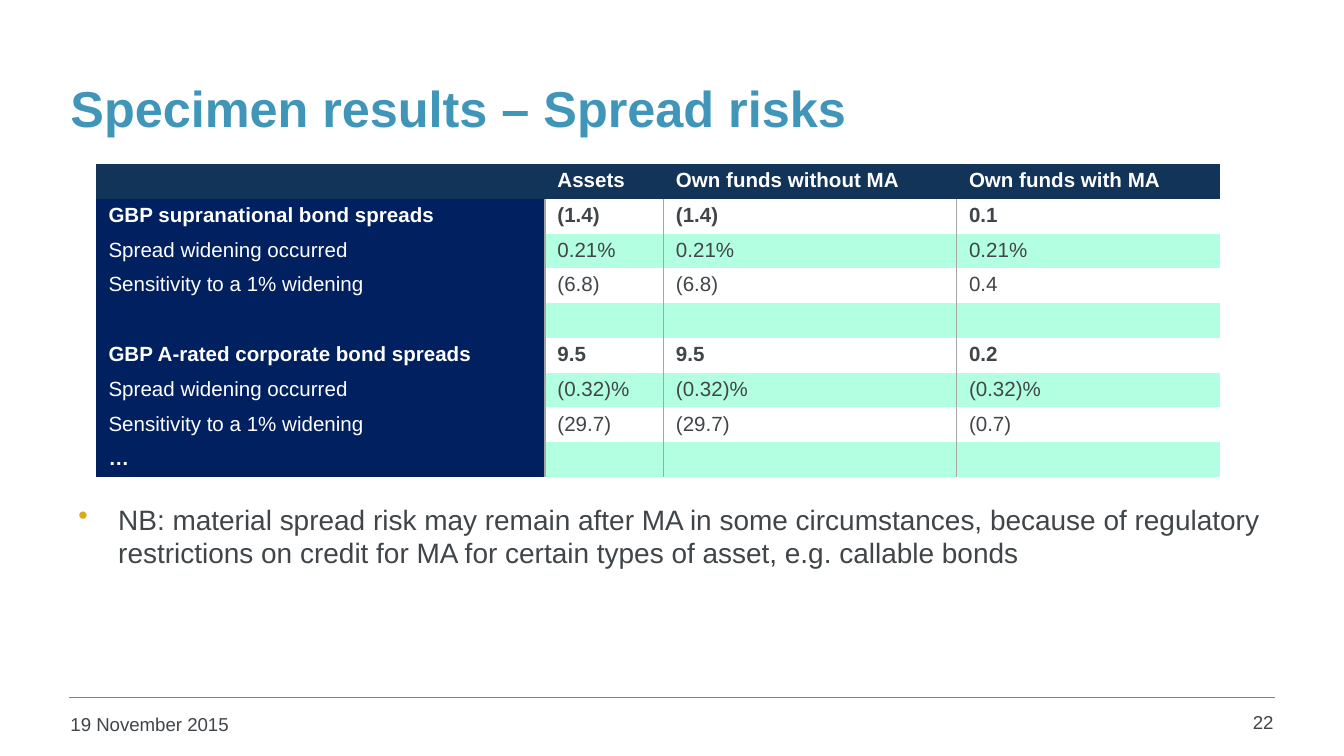
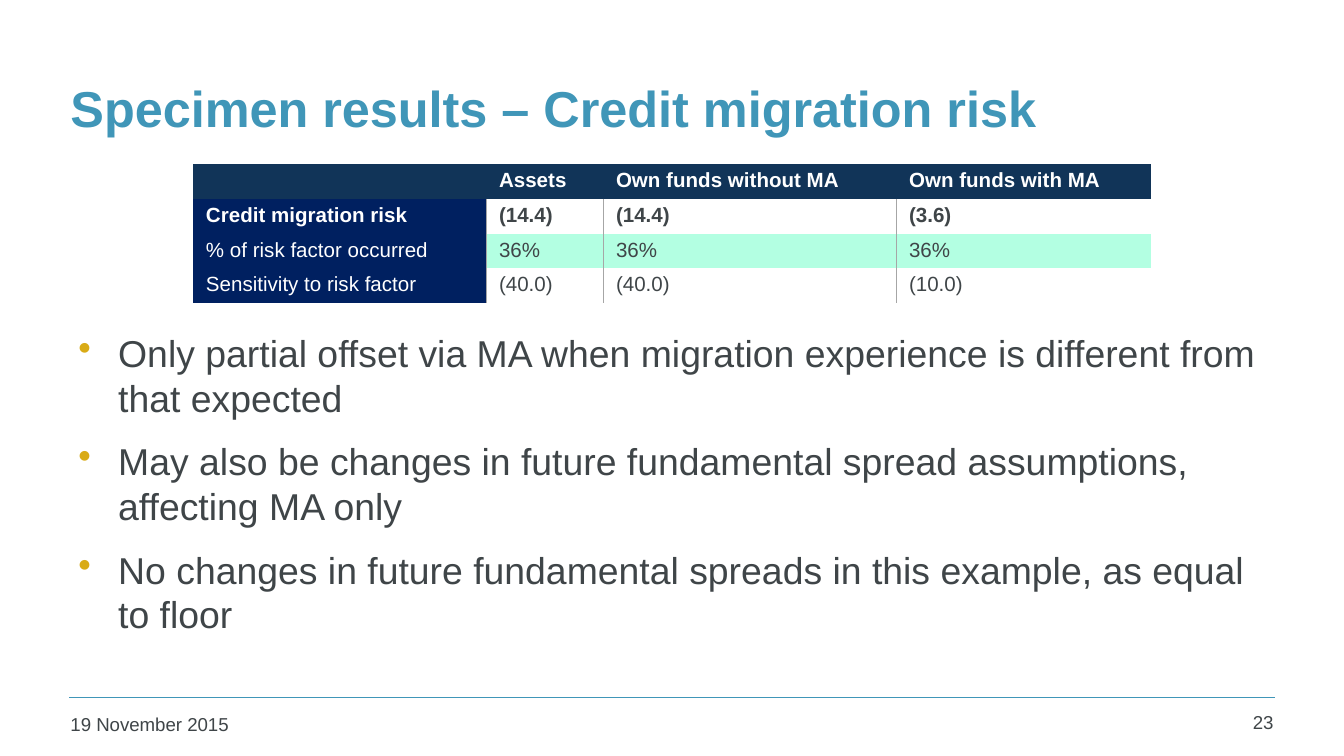
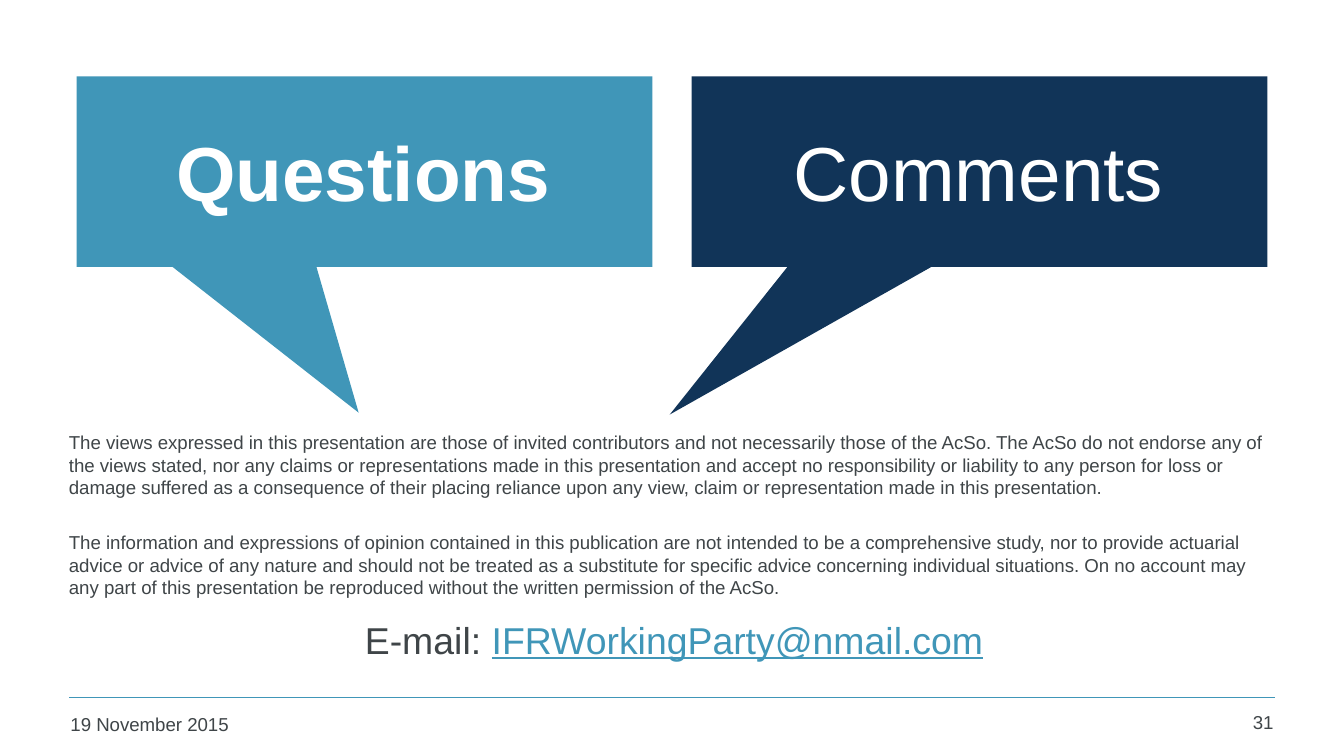
import pptx
import pptx.dml.color
import pptx.enum.shapes
import pptx.enum.text
import pptx.oxml.ns
import pptx.util
from lxml import etree

Pt = pptx.util.Pt
RGBColor = pptx.dml.color.RGBColor
ALIGN = pptx.enum.text.PP_ALIGN
ANCHOR = pptx.enum.text.MSO_ANCHOR
SHAPE = pptx.enum.shapes.MSO_SHAPE
qn = pptx.oxml.ns.qn

BLUE = RGBColor(0x40, 0x96, 0xB8)
DARK_BLUE = RGBColor(0x11, 0x34, 0x58)
NAVY = RGBColor(0x00, 0x20, 0x60)
MINT = RGBColor(0xB3, 0xFF, 0xE2)
WHITE = RGBColor(0xFF, 0xFF, 0xFF)
GREY = RGBColor(0x3F, 0x45, 0x48)
RULE_GREY = RGBColor(0xA6, 0xA6, 0xA6)
GOLD = RGBColor(0xD9, 0xAB, 0x16)
FONT = "Arial"
PAD_X, PAD_Y = Pt(6.75), Pt(2.7)

prs = pptx.Presentation()
prs.slide_width, prs.slide_height = Pt(720), Pt(405)


def style(p, size, color, bold=False, align=ALIGN.LEFT):
    p.font.name, p.font.size, p.font.bold = FONT, Pt(size), bold
    p.font.color.rgb = color
    p.alignment = align


def add_text(s, box, texts, size, color=GREY, bold=False, align=ALIGN.LEFT, anchor=ANCHOR.TOP):
    tf = s.shapes.add_textbox(*[Pt(v) for v in box]).text_frame
    tf.word_wrap = True
    tf.vertical_anchor = anchor
    tf.margin_left = tf.margin_right = PAD_X
    tf.margin_top = tf.margin_bottom = PAD_Y
    for i, text in enumerate(texts):
        p = tf.add_paragraph() if i else tf.paragraphs[0]
        p.add_run().text = text
        style(p, size, color, bold, align)
    return tf


# Rule, date and page number on every slide
for number in ("22", "23", "31"):
    s = prs.slides.add_slide(prs.slide_layouts[6])
    rule = s.shapes.add_connector(pptx.enum.shapes.MSO_CONNECTOR.STRAIGHT,
                                  Pt(37), Pt(373.7), Pt(683), Pt(373.7))
    rule.line.color.rgb = BLUE
    rule.line.width = Pt(1)
    etree.SubElement(rule._element.spPr, qn("a:effectLst"))
    add_text(s, (31, 379, 158, 19.5), ["19 November 2015"], 10)
    add_text(s, (638, 378, 51, 20), [number], 10, align=ALIGN.RIGHT)

# Result slides: title, table, bullets
HEADER = ("", "Assets", "Own funds without MA", "Own funds with MA")
results = [
    dict(title="Specimen results – Spread risks",
         left=51.4, widths=(240.5, 63.5, 157, 141),
         rows=[("GBP supranational bond spreads", "(1.4)", "(1.4)", "0.1"),
               ("Spread widening occurred", "0.21%", "0.21%", "0.21%"),
               ("Sensitivity to a 1% widening", "(6.8)", "(6.8)", "0.4"),
               ("", "", "", ""),
               ("GBP A-rated corporate bond spreads", "9.5", "9.5", "0.2"),
               ("Spread widening occurred", "(0.32)%", "(0.32)%", "(0.32)%"),
               ("Sensitivity to a 1% widening", "(29.7)", "(29.7)", "(0.7)"),
               ("…", "", "", "")],
         bold_rows=(0, 1, 5, 8), bullet_top=266.4, bullet_size=15,
         bullets=["NB: material spread risk may remain after MA in some circumstances, because of "
                  "regulatory restrictions on credit for MA for certain types of asset, "
                  "e.g. callable bonds"]),
    dict(title="Specimen results – Credit migration risk",
         left=103.6, widths=(157, 62.7, 157, 136.3),
         rows=[("Credit migration risk", "(14.4)", "(14.4)", "(3.6)"),
               ("% of risk factor occurred", "36%", "36%", "36%"),
               ("Sensitivity to risk factor", "(40.0)", "(40.0)", "(10.0)")],
         bold_rows=(0, 1), bullet_top=174.2, bullet_size=20,
         bullets=["Only partial offset via MA when migration experience is different from "
                  "that expected",
                  "May also be changes in future fundamental spread assumptions, "
                  "affecting MA only",
                  "No changes in future fundamental spreads in this example, as equal to floor"]),
]
ROW_HEIGHT = 18

for s, result in zip(prs.slides, results):
    add_text(s, (31, 24, 653, 67.5), [result["title"]], 27, BLUE, True, anchor=ANCHOR.MIDDLE)

    rows = [HEADER] + result["rows"]
    widths = result["widths"]
    table = s.shapes.add_table(len(rows), len(widths), Pt(result["left"]), Pt(87.9),
                               Pt(sum(widths)), Pt(ROW_HEIGHT * len(rows))).table
    for column, width in zip(table.columns, widths):
        column.width = Pt(width)
    for i, row in enumerate(rows):
        table.rows[i].height = Pt(ROW_HEIGHT)
        for j, text in enumerate(row):
            cell = table.cell(i, j)
            cell.margin_left = cell.margin_right = PAD_X
            cell.margin_top = cell.margin_bottom = PAD_Y
            p = cell.text_frame.paragraphs[0]
            style(p, 11, WHITE if i == 0 or j == 0 else GREY, i in result["bold_rows"])
            if text:
                p.add_run().text = text
            else:
                etree.SubElement(p._p, qn("a:endParaRPr"), sz="1100")

            # Vertical rules between the body columns only
            ruled = {"lnL": i > 0 and j > 0, "lnR": i > 0 and j < len(widths) - 1}
            for side in ("lnL", "lnR", "lnT", "lnB"):
                ln = etree.SubElement(cell._tc.get_or_add_tcPr(), qn("a:" + side), w="12700")
                if ruled.get(side):
                    fill = etree.SubElement(ln, qn("a:solidFill"))
                    etree.SubElement(fill, qn("a:srgbClr"), val=str(RULE_GREY))
                else:
                    etree.SubElement(ln, qn("a:noFill"))
            cell.fill.solid()
            if i == 0:
                cell.fill.fore_color.rgb = DARK_BLUE
            elif j == 0:
                cell.fill.fore_color.rgb = NAVY
            else:
                cell.fill.fore_color.rgb = WHITE if i % 2 else MINT

    size = result["bullet_size"]
    tf = add_text(s, (35.2, result["bullet_top"], 653, 91.5), result["bullets"], size)
    for i, p in enumerate(tf.paragraphs):
        p.space_before = Pt(size / 2 if i else 0)
        pPr = p._p.get_or_add_pPr()
        pPr.set("marL", str(Pt(21.4)))
        pPr.set("indent", str(-Pt(21.4)))
        color = etree.Element(qn("a:buClr"))
        etree.SubElement(color, qn("a:srgbClr"), val=str(GOLD))
        bullet = etree.Element(qn("a:buChar"), char="•")
        for element in (color, bullet):
            pPr.find(qn("a:defRPr")).addprevious(element)

# Closing slide: two callouts
s = prs.slides[2]
callouts = [("Questions", 41, BLUE, True, (-0.01, 1.266)),
            ("Comments", 370.5, DARK_BLUE, False, (-0.538, 1.276))]
for text, left, color, bold, tip in callouts:
    sp = s.shapes.add_shape(SHAPE.RECTANGULAR_CALLOUT, Pt(left), Pt(41), Pt(308.5), Pt(102))
    sp.shadow.inherit = False
    sp.fill.solid()
    sp.fill.fore_color.rgb = color
    sp.line.fill.background()
    sp.adjustments[0], sp.adjustments[1] = tip
    add_text(s, (left + 15.2, 58, 277, 67.5), [text], 41, WHITE, bold,
             ALIGN.CENTER, ANCHOR.MIDDLE)

# Closing slide: disclaimer and address
tf = add_text(s, (30.2, 228.2, 662, 143), [
    "The views expressed in this presentation are those of invited contributors and not "
    "necessarily those of the AcSo. The AcSo do not endorse any of the views stated, nor any "
    "claims or representations made in this presentation and accept no responsibility or "
    "liability to any person for loss or damage suffered as a consequence of their placing "
    "reliance upon any view, claim or representation made in this presentation.",
    "The information and expressions of opinion contained in this publication are not intended "
    "to be a comprehensive study, nor to provide actuarial advice or advice of any nature and "
    "should not be treated as a substitute for specific advice concerning individual "
    "situations. On no account may any part of this presentation be reproduced without the "
    "written permission of the AcSo.",
    "E-mail: "], 10)
disclaimer, conditions, contact = tf.paragraphs
conditions.space_before = Pt(17.5)
contact.space_before = Pt(10)
style(contact, 20, GREY, align=ALIGN.CENTER)
r = contact.add_run()
r.text = "IFRWorkingParty@nmail.com"
r.font.color.rgb = BLUE
r.font.underline = True

prs.save("out.pptx")
